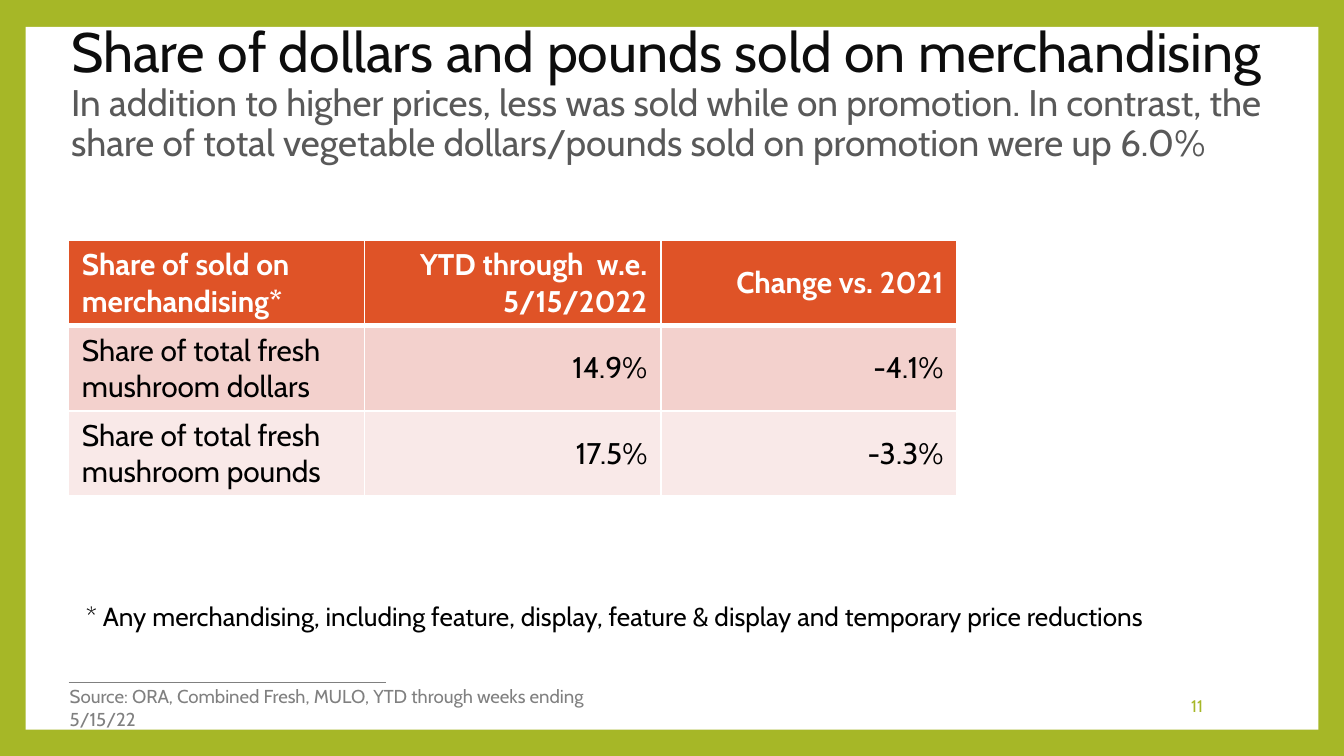
from lxml import etree
from pptx import Presentation, util as u
from pptx.dml.color import RGBColor
from pptx.enum import shapes, text
from pptx.oxml import ns

COLORS = {
    "green": "A6B727", "white": "FFFFFF", "black": "000000",
    "title": "0D0D0D", "sub": "595959", "gray": "808080",
    "head": "DF5327", "odd": "F3D1CD", "even": "F9E9E8",
}
FONT = "Cabin"
LEFT, RIGHT = text.PP_ALIGN.LEFT, text.PP_ALIGN.RIGHT
ROWS = [
    ["Share of sold on merchandising*", "YTD through  w.e. 5/15/2022", "Change vs. 2021"],
    ["Share of total fresh mushroom dollars", "14.9%", "-4.1%"],
    ["Share of total fresh mushroom pounds", "17.5%", "-3.3%"],
]


def paint(fill, color):
    fill.solid()
    fill.fore_color.rgb = RGBColor.from_string(COLORS[color])


def style(run, size, color, bold=False):
    run.font.name = FONT
    run.font.size = u.Pt(size)
    run.font.bold = bold
    run.font.color.rgb = RGBColor.from_string(COLORS[color])


def add_text(slide, box, words, looks, align=LEFT, anchor=text.MSO_ANCHOR.TOP):
    """Add a text box; looks holds one (size, color) pair per run."""
    frame = slide.shapes.add_textbox(*map(u.Inches, box)).text_frame
    frame.word_wrap = True
    frame.vertical_anchor = anchor
    frame.text = words
    para = frame.paragraphs[0]
    para.alignment = align
    for run, look in zip(para.runs, looks):
        style(run, *look)
    return para


def add_panel(slide, box):
    panel = slide.shapes.add_shape(shapes.MSO_SHAPE.RECTANGLE, *map(u.Inches, box))
    panel.shadow.inherit = False
    paint(panel.fill, "white")
    panel.line.fill.background()


def add_title(slide, box):
    para = add_text(
        slide, box,
        "Share of dollars and pounds sold on merchandising\v"
        "In addition to higher prices, less was sold while on promotion. In contrast, "
        "the share of total vegetable dollars/pounds sold on promotion were up 6.0%",
        [(29.7, "title"), (19.8, "sub")], anchor=text.MSO_ANCHOR.MIDDLE)
    para.line_spacing = 0.9


def add_edges(cell, top, bottom):
    """Draw white cell borders, with top and bottom widths in points."""
    props = cell._tc.get_or_add_tcPr()
    for spot, (side, width) in enumerate(
            [("lnL", 1), ("lnR", 1), ("lnT", top), ("lnB", bottom)]):
        edge = etree.Element(ns.qn(f"a:{side}"), w=str(u.Pt(width)))
        fill = etree.SubElement(edge, ns.qn("a:solidFill"))
        etree.SubElement(fill, ns.qn("a:srgbClr"), val=COLORS["white"])
        props.insert(spot, edge)


def add_grid(slide, box):
    frame = slide.shapes.add_table(len(ROWS), len(ROWS[0]), *map(u.Inches, box))
    for r, (words, color) in enumerate(zip(ROWS, ["head", "odd", "even"])):
        for c, word in enumerate(words):
            cell = frame.table.cell(r, c)
            cell.text = word
            cell.vertical_anchor = text.MSO_ANCHOR.MIDDLE
            paint(cell.fill, color)
            para = cell.text_frame.paragraphs[0]
            para.alignment = RIGHT if c else LEFT
            style(para.runs[0], 16, "black" if r else "white", bold=r == 0)
            add_edges(cell, top=3 if r == 1 else 1, bottom=1 if r else 3)


def add_foot(slide, box):
    """Add the rule, the source and the page number."""
    left, top, width, height = box
    start, end = u.Inches(left + 0.09), u.Inches(left + 2.45)
    level = u.Inches(top + 0.03)
    rule = slide.shapes.add_connector(
        shapes.MSO_CONNECTOR.STRAIGHT, start, level, end, level)
    rule.line.width = u.Pt(0.79)
    rule.line.color.rgb = RGBColor.from_string(COLORS["gray"])
    etree.SubElement(rule._element.spPr, ns.qn("a:effectLst"))
    add_text(slide, (left, top, 4.38, height),
             "Source: ORA, Combined Fresh, MULO, YTD through weeks ending 5/15/22",
             [(10, "gray")])
    add_text(slide, (left + width - 1.4, top + 0.05, 1.4, 0.3), "11",
             [(9, "green")], RIGHT, text.MSO_ANCHOR.MIDDLE)


def main():
    deck = Presentation()
    deck.slide_width = u.Inches(10)
    deck.slide_height = deck.slide_width * 9 // 16
    slide = deck.slides.add_slide(deck.slide_layouts[6])
    paint(slide.background.fill, "green")
    add_panel(slide, (0.19, 0.2, 9.62, 5.23))
    add_title(slide, (0.43, 0.31, 9.29, 0.79))
    add_grid(slide, (0.51, 1.79, 6.61, 1.9))
    add_text(slide, (0.54, 4.42, 8.1, 0.34),
             "* Any merchandising, including feature, display, feature & display "
             "and temporary price reductions", [(14, "black")])
    add_foot(slide, (0.42, 5.05, 8.63, 0.27))
    deck.save("out.pptx")


if __name__ == "__main__":
    main()
